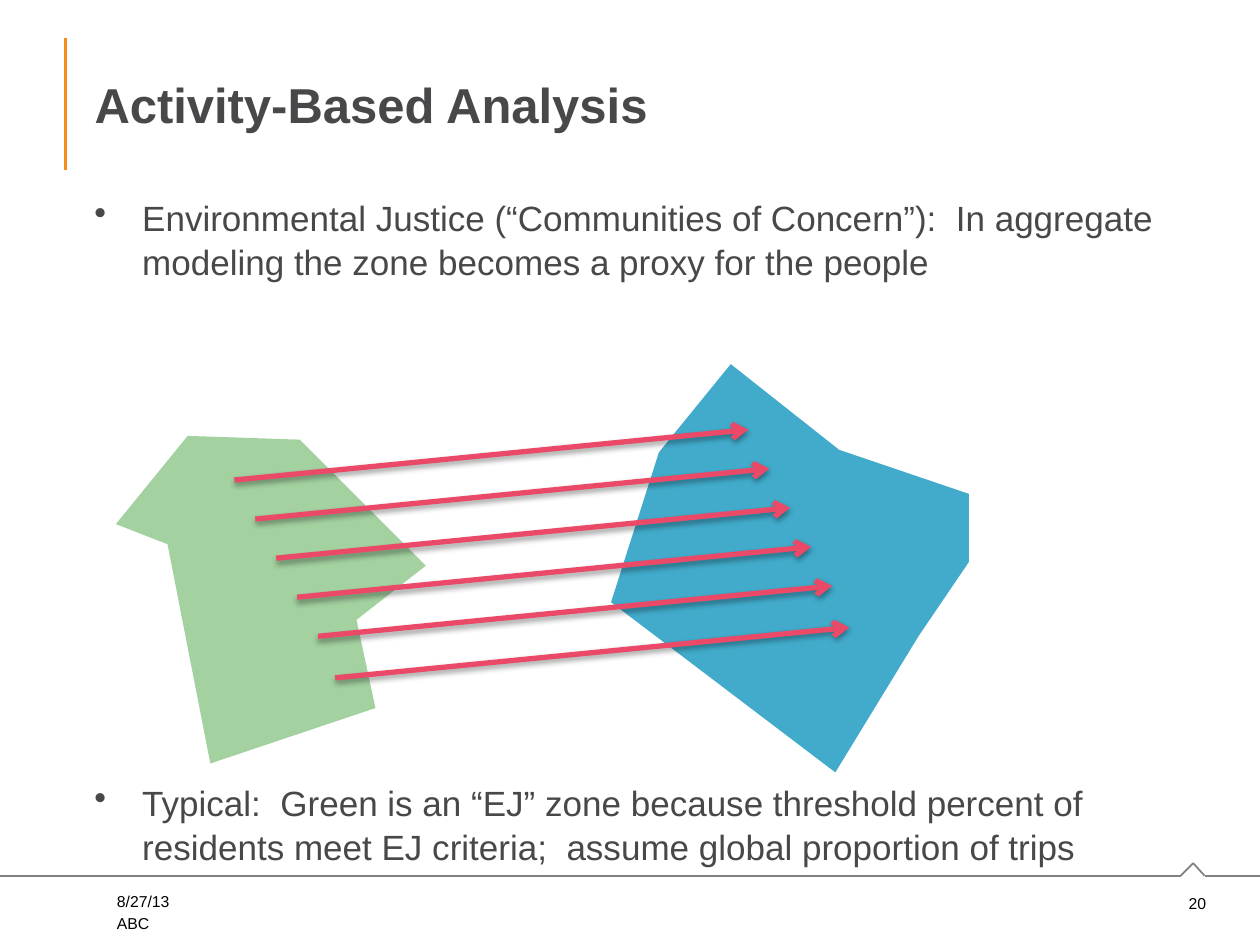
from lxml import etree
from pptx import Presentation
from pptx.dml.color import RGBColor
from pptx.enum.shapes import MSO_CONNECTOR
from pptx.enum.text import MSO_ANCHOR, PP_ALIGN
from pptx.oxml.ns import qn
from pptx.util import Inches, Pt

FONT = "Arial"
INK = "48484A"
GRAY = "808080"


def color(hex_string):
    return RGBColor.from_string(hex_string)


def style_font(font, size, hex_string, bold=False):
    font.name, font.size, font.bold = FONT, Pt(size), bold
    font.color.rgb = color(hex_string)


def place(shape, left, top, width, height):
    shape.left, shape.top = Inches(left), Inches(top)
    shape.width, shape.height = Inches(width), Inches(height)


def add_line(page, start, end, hex_string, width, shadow=False):
    line = page.shapes.add_connector(
        MSO_CONNECTOR.STRAIGHT, *(Inches(value) for value in (*start, *end)))
    line.line.color.rgb = color(hex_string)
    line.line.width = Pt(width)
    if not shadow:
        etree.SubElement(line._element.spPr, qn("a:effectLst"))
    return line


def add_text(page, left, top, width, height):
    box = page.shapes.add_textbox(
        Inches(left), Inches(top), Inches(width), Inches(height))
    box.text_frame.word_wrap = True
    return box.text_frame


def add_title(page, left, top, width, height):
    # Accent rule beside the title
    add_line(page, (left - 0.13, top), (left - 0.13, top + height), "F68B1F", 1.5)
    title = page.shapes.title
    place(title, left, top, width, height)
    frame = title.text_frame
    frame.text = "Activity-Based Analysis"
    frame.vertical_anchor = MSO_ANCHOR.MIDDLE
    para = frame.paragraphs[0]
    para.alignment = PP_ALIGN.LEFT
    style_font(para.runs[0].font, 28, INK, bold=True)


def add_bullets(page, left, top, width, height):
    frame = add_text(page, left, top, width, height)
    # Text and the gap above it, which leaves room for the zones
    bullets = [
        ("Environmental Justice (“Communities of Concern”):  In aggregate "
         "modeling the zone becomes a proxy for the people", 0),
        ("Typical:  Green is an “EJ” zone because threshold percent of "
         "residents meet EJ criteria;  assume global proportion of trips", 284),
    ]
    for index, (text, gap) in enumerate(bullets):
        para = frame.add_paragraph() if index else frame.paragraphs[0]
        para.text = text
        properties = para._p.get_or_add_pPr()
        properties.set("marL", str(Inches(0.38)))
        properties.set("indent", str(-Inches(0.38)))
        etree.SubElement(properties, qn("a:buChar"), char="•")
        para.space_before = Pt(gap)
        para.line_spacing = 1.05
        style_font(para.runs[0].font, 20, INK)


def add_zone(page, points, fill):
    corners = [(Inches(x), Inches(y)) for x, y in points]
    builder = page.shapes.build_freeform(*corners[0])
    builder.add_line_segments(corners[1:], close=True)
    zone = builder.convert_to_shape()
    zone.shadow.inherit = False
    zone.fill.solid()
    zone.fill.fore_color.rgb = color(fill)
    zone.line.fill.background()


def add_trip_diagram(page, left, top):
    # Home and destination zones, as offsets from the diagram corner
    zones = {
        "A3D1A0": [(0, 1.27), (0.57, 0.57), (1.46, 0.6), (2.46, 1.6),
                   (1.91, 2.03), (2.06, 2.73), (0.75, 3.17), (0.41, 1.43)],
        "42ABCB": [(4.31, 0.7), (4.88, 0), (5.74, 0.68), (6.77, 1.03),
                   (6.77, 1.57), (6.37, 2.16), (5.71, 3.24), (3.93, 1.89)],
    }
    for fill, points in zones.items():
        add_zone(page, [(left + x, top + y) for x, y in points], fill)

    # Parallel trips; the last one sits slightly off the even steps
    starts = [(0.94 + 0.166 * step, 0.92 + 0.31 * step) for step in range(5)]
    for x, y in starts + [(1.74, 2.49)]:
        x, y = left + x, top + y
        trip = add_line(page, (x, y), (x + 4.08, y - 0.4), "EA4A67", 3, shadow=True)
        etree.SubElement(trip.line._get_or_add_ln(), qn("a:tailEnd"), type="arrow")


def add_footer(page, top):
    # Rule with a small peak above the page number
    peak = [(0, top), (9.37, top), (9.47, top - 0.1), (9.56, top), (10, top)]
    for start, end in zip(peak, peak[1:]):
        add_line(page, start, end, GRAY, 1)

    # Page number, date and organisation
    labels = [
        ("20", 9.25, 0.09, 0.42, PP_ALIGN.RIGHT),
        ("8/27/13", 0.83, 0.08, 2.27, PP_ALIGN.LEFT),
        ("ABC", 0.83, 0.25, 2.27, PP_ALIGN.LEFT),
    ]
    for text, left, offset, width, align in labels:
        frame = add_text(page, left, top + offset, width, 0.25)
        frame.text = text
        para = frame.paragraphs[0]
        para.alignment = align
        style_font(para.runs[0].font, 9, "000000")


def main():
    deck = Presentation()
    deck.slide_width, deck.slide_height = Inches(10), Inches(7.5)
    page = deck.slides.add_slide(deck.slide_layouts[5])
    add_footer(page, 6.95)
    add_title(page, 0.65, 0.3, 8.85, 1.05)
    add_bullets(page, 0.65, 1.49, 8.85, 4.78)
    add_trip_diagram(page, 0.92, 2.89)
    deck.save("out.pptx")


if __name__ == "__main__":
    main()
